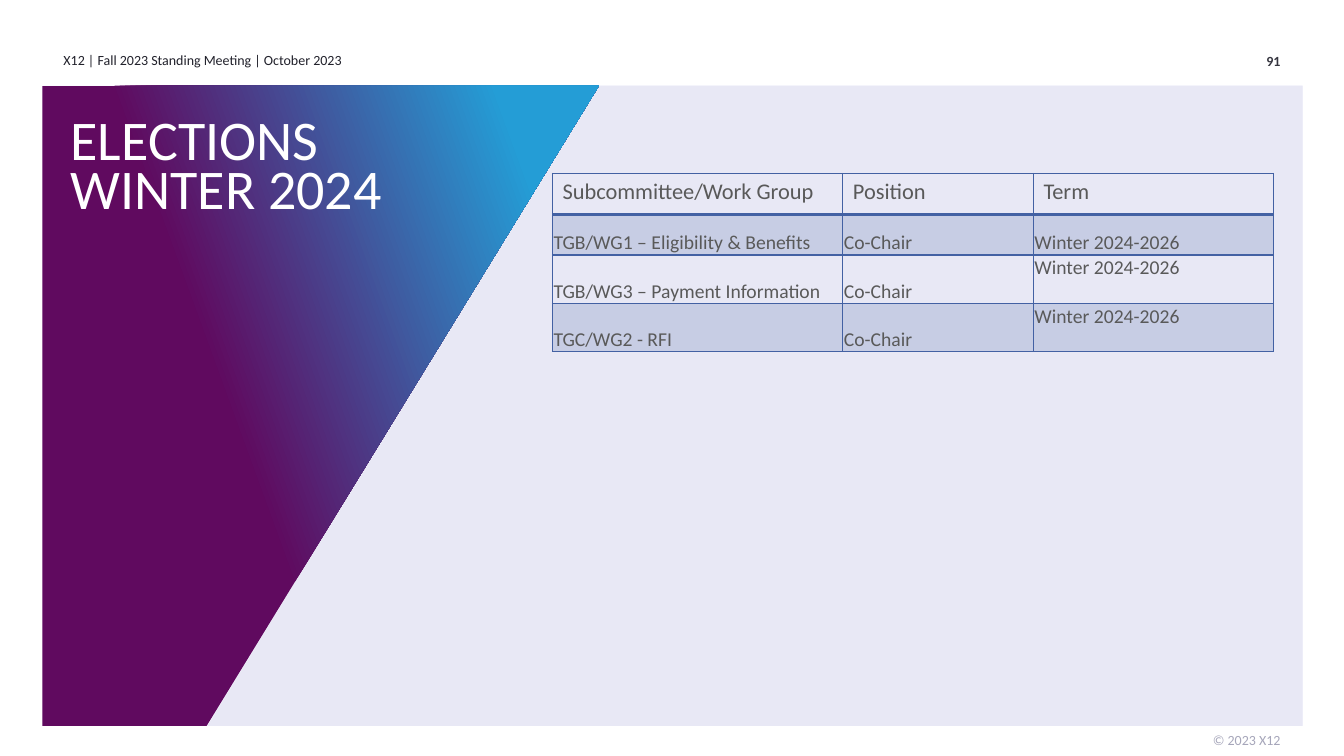
import pptx
import pptx.dml.color
import pptx.enum.dml
import pptx.enum.shapes
import pptx.enum.text
import pptx.oxml
import pptx.oxml.ns
import pptx.util
import lxml.etree

Inches = pptx.util.Inches
Pt = pptx.util.Pt
RGB = pptx.dml.color.RGBColor
ALIGN = pptx.enum.text.PP_ALIGN
ANCHOR = pptx.enum.text.MSO_ANCHOR
RECT = pptx.enum.shapes.MSO_SHAPE.RECTANGLE
qn = pptx.oxml.ns.qn

WHITE = RGB(0xFF, 0xFF, 0xFF)
PALE = RGB(0xF7, 0xF7, 0xFF)
LILAC = RGB(0xE8, 0xE8, 0xF5)
PLUM = RGB(0x60, 0x0A, 0x5F)
SKY = RGB(0x24, 0x9D, 0xD6)
INK = RGB(0x21, 0x21, 0x2B)
SLATE = RGB(0x36, 0x36, 0x40)
MIST = RGB(0xA6, 0xA6, 0xBA)
GREY = RGB(0x59, 0x59, 0x59)
BLUE = RGB(0x43, 0x61, 0xA3)

HEAD = ["Subcommittee/Work Group", "Position", "Term"]
GROUPS = [
    "TGB/WG1 – Eligibility & Benefits",
    "TGB/WG3 – Payment Information",
    "TGC/WG2 - RFI",
]
ROWS = [HEAD] + [[group, "Co-Chair", "Winter 2024-2026"] for group in GROUPS]


class Deck:
    font = "Calibri"

    def __init__(self):
        self.file = pptx.Presentation()
        self.file.slide_width = Inches(13.33)
        self.file.slide_height = Inches(7.5)
        self.slide = self.file.slides.add_slide(self.file.slide_layouts[5])
        self.shapes = self.slide.shapes

    def words(self, frame, text, size, color, bold=False, align=ALIGN.LEFT):
        frame.text = text
        frame.word_wrap = True
        para = frame.paragraphs[0]
        para.alignment = align
        font = para.runs[0].font
        font.name, font.size, font.bold = self.font, Pt(size), bold
        font.color.rgb = color

    def trim(self, frame):
        frame.margin_left = frame.margin_right = 0
        frame.margin_top = frame.margin_bottom = 0
        frame.vertical_anchor = ANCHOR.TOP
        frame.auto_size = pptx.enum.text.MSO_AUTO_SIZE.NONE

    def label(self, box, text, color, **style):
        frame = self.shapes.add_textbox(*map(Inches, box)).text_frame
        self.trim(frame)
        self.words(frame, text, 10, color, **style)

    def title(self, box, text):
        title = self.shapes.title
        title.left, title.top, title.width, title.height = map(Inches, box)
        self.trim(title.text_frame)
        self.words(title.text_frame, text, 40, WHITE)
        title.text_frame.paragraphs[0].line_spacing = Pt(35)
        title.element.getparent().append(title.element)

    def plain(self, shape, color=None):
        shape.shadow.inherit = False
        shape.line.fill.background()
        if color is not None:
            shape.fill.solid()
            shape.fill.fore_color.rgb = color
        return shape

    def panel(self, box, color):
        self.plain(self.shapes.add_shape(RECT, *map(Inches, box)), color)

    def outline(self, points, color=None):
        first, *rest = [(Inches(x), Inches(y)) for x, y in points]
        pen = self.shapes.build_freeform(*first, scale=1.0)
        pen.add_line_segments(rest, close=True)
        return self.plain(pen.convert_to_shape(), color)

    def blend(self, points, stops, angle):
        fill = self.outline(points).fill
        fill.gradient()
        fill.gradient_angle = angle
        for stop, (place, color) in zip(fill.gradient_stops, stops):
            stop.position = place
            stop.color.rgb = color

    def border(self, cell, widths):
        props = cell._tc.get_or_add_tcPr()
        for spot, (side, width) in enumerate(zip("LRTB", widths)):
            line = pptx.oxml.parse_xml(
                '<a:ln%s xmlns:a="http://schemas.openxmlformats.org/drawingml/2006/main" w="%d">'
                '<a:solidFill><a:srgbClr val="%s"/></a:solidFill></a:ln%s>'
                % (side, Pt(width), BLUE, side)
            )
            props.insert(spot, line)

    def shade(self, cell, banded):
        if not banded:
            cell.fill.background()
            return
        cell.fill.solid()
        cell.fill.fore_color.rgb = BLUE
        tone = cell._tc.tcPr.find(qn("a:solidFill"))[0]
        lxml.etree.SubElement(tone, qn("a:alpha")).set("val", "20000")

    def table(self, box, rows, widths, heights):
        grid = self.shapes.add_table(len(rows), len(widths), *map(Inches, box)).table
        grid.first_row = grid.horz_banding = False
        for col, width in zip(grid.columns, widths):
            col.width = Inches(width)
        for row, height in zip(grid.rows, heights):
            row.height = Inches(height)
        for r, row in enumerate(rows):
            for c, text in enumerate(row):
                cell = grid.cell(r, c)
                self.words(cell.text_frame, text, 14 if r else 16, GREY)
                if r:
                    cell.margin_left = cell.margin_right = cell.margin_top = Inches(0.01)
                    cell.margin_bottom = 0
                    high = r > 1 and c == 2
                    cell.vertical_anchor = ANCHOR.TOP if high else ANCHOR.BOTTOM
                self.shade(cell, r % 2 == 1)
                self.border(cell, (1, 1, 2 if r == 1 else 1, 1 if r else 2))


def main():
    deck = Deck()
    deck.panel((0.42, 0.85, 12.5, 6.35), PALE)
    deck.label((0.63, 0.51, 4.5, 0.25), "X12 | Fall 2023 Standing Meeting | October 2023", INK)
    deck.label((11.19, 0.52, 1.51, 0.25), "91", SLATE, bold=True, align=ALIGN.RIGHT)
    deck.label((11.19, 7.26, 1.51, 0.25), "© 2023 X12", MIST, align=ALIGN.RIGHT)
    deck.outline([(2.06, 7.2), (5.93, 0.85), (12.92, 0.85), (12.92, 7.2)], LILAC)
    deck.blend(
        [(0.42, 0.85), (5.94, 0.85), (2.05, 7.2), (0.42, 7.2)],
        [(0.38, PLUM), (0.87, SKY)],
        20,
    )
    deck.title((0.7, 1.22, 3.69, 1.67), "ELECTIONS WINTER 2024")
    deck.table((5.48, 1.72, 7.15, 1.77), ROWS, (2.88, 1.89, 2.38), (0.41, 0.4, 0.48, 0.48))
    deck.file.save("out.pptx")


if __name__ == "__main__":
    main()
